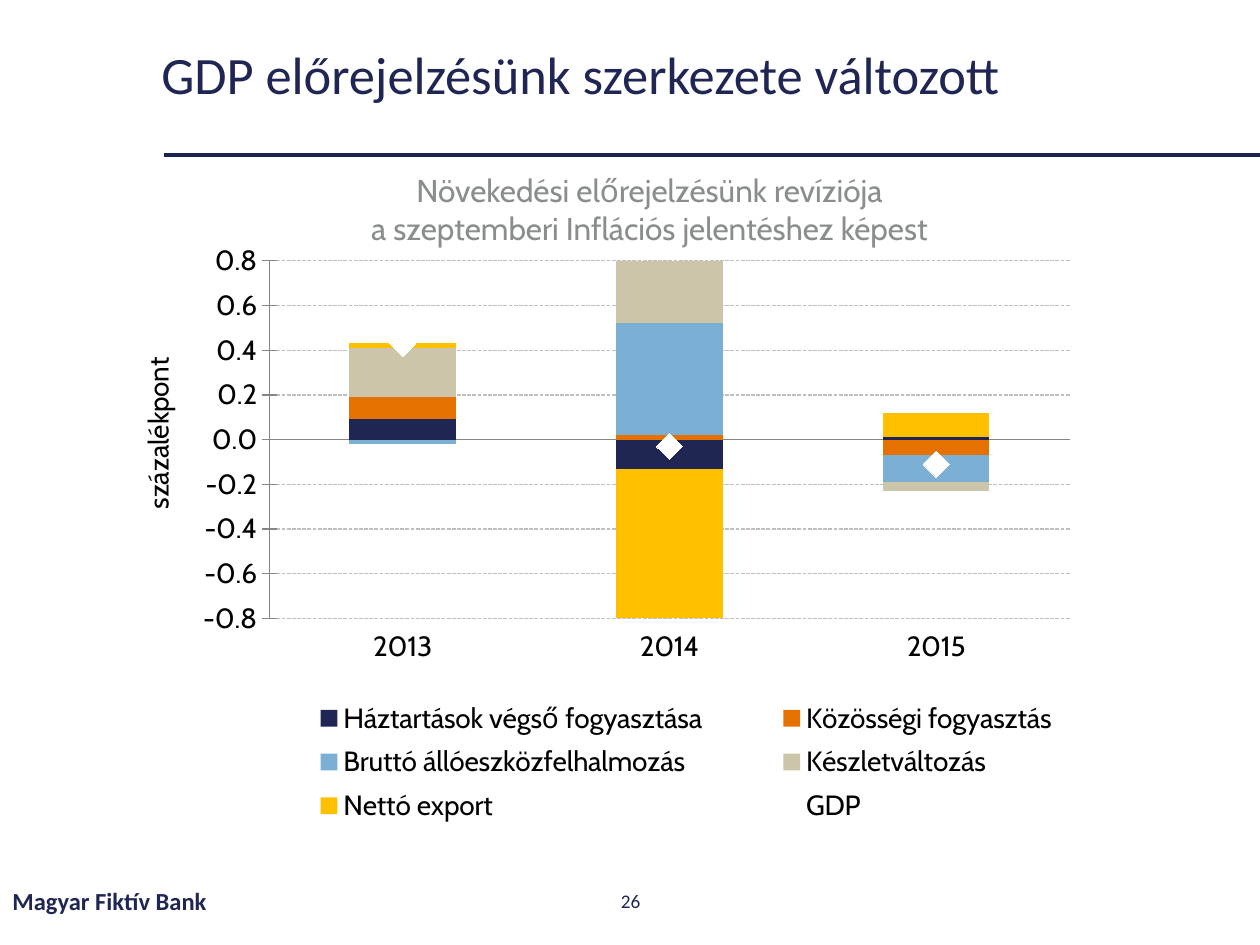
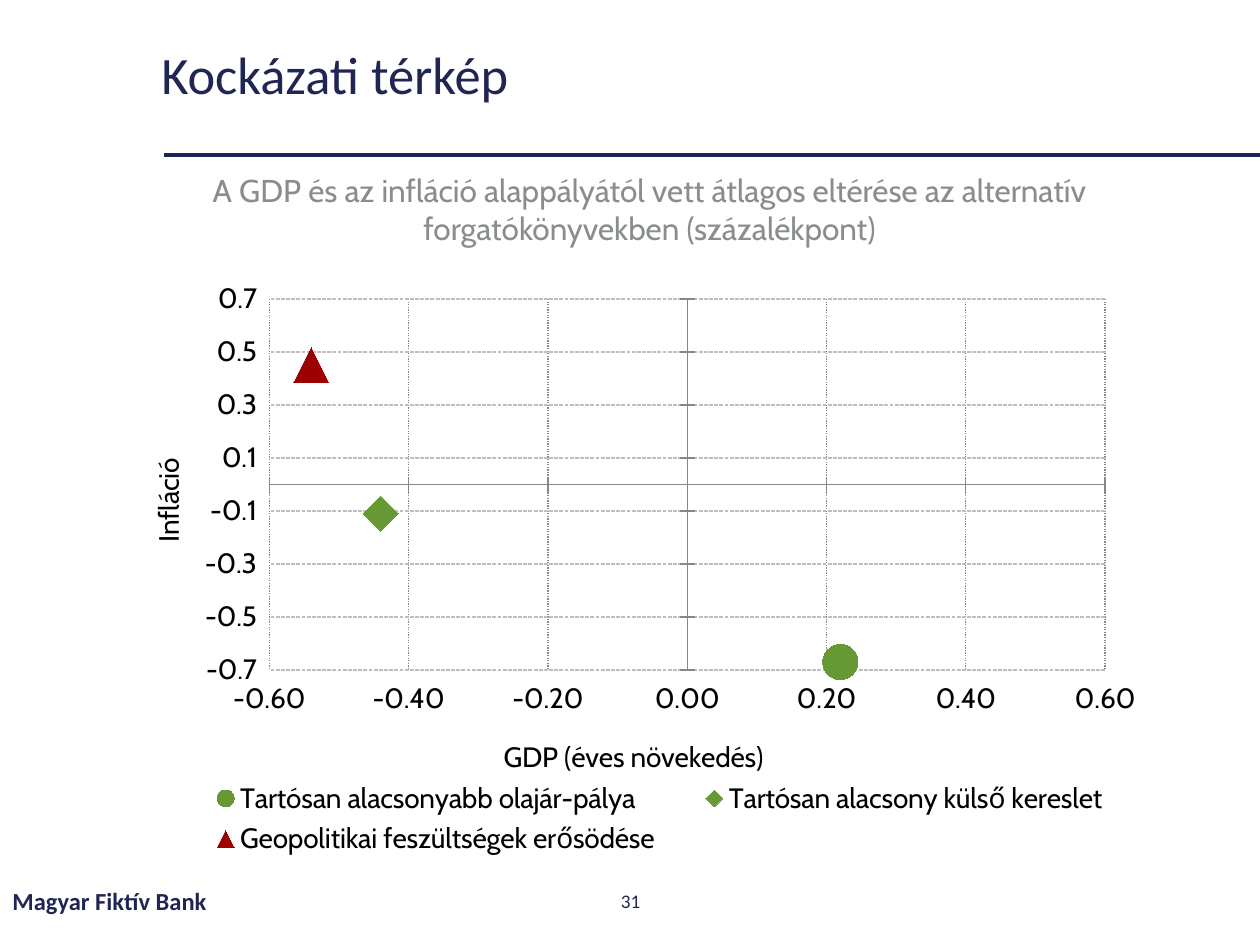
from dataclasses import dataclass
from pptx import Presentation
from pptx.chart.data import CategoryChartData as CatData, XyChartData as XyData
from pptx.dml.color import RGBColor as Rgb
from pptx.enum.chart import XL_CHART_TYPE as Kind, XL_LEGEND_POSITION as Spot
from pptx.enum.chart import XL_MARKER_STYLE as Mark, XL_TICK_LABEL_POSITION as Label
from pptx.enum.chart import XL_TICK_MARK as Tick
from pptx.enum.dml import MSO_LINE_DASH_STYLE as Dash
from pptx.enum.shapes import MSO_CONNECTOR as Conn
from pptx.enum.text import MSO_ANCHOR as Anchor, PP_ALIGN as Align
from pptx.oxml import parse_xml
from pptx.oxml.ns import nsdecls, qn
from pptx.util import Inches, Pt
from lxml.etree import SubElement

FOOT = "Magyar Fiktív Bank"

BARS = {
    "title": "GDP előrejelzésünk szerkezete változott",
    "page": "26",
    "lead": ["Növekedési előrejelzésünk revíziója",
             "a szeptemberi Inflációs jelentéshez képest"],
    "top": 1.94,
    "years": ["2013", "2014", "2015"],
    "rows": [
        ("Háztartások végső fogyasztása", (0.09, -0.13, 0.01), "202653"),
        ("Közösségi fogyasztás", (0.1, 0.02, -0.07), "E57200"),
        ("Bruttó állóeszközfelhalmozás", (-0.02, 0.5, -0.12), "7BAFD4"),
        ("Készletváltozás", (0.22, 0.31, -0.04), "CDC5A9"),
        ("Nettó export", (0.02, -0.72, 0.11), "FFC000"),
        ("GDP", (0.43, -0.03, -0.11), "FFFFFF"),
    ],
    "plot": (0.14, 0.025, 0.768, 0.603),
    "key": (0.12, 0.75, 0.84, 0.24),
    "ytitle": ("százalékpont", 0.01, 0.18),
    "yspan": (-0.8, 0.8, 0.2),
}
RISKS = {
    "title": "Kockázati térkép",
    "page": "31",
    "lead": ["A GDP és az infláció alappályától vett átlagos eltérése "
             "az alternatív forgatókönyvekben (százalékpont)"],
    "top": 2.18,
    "rows": [
        ("Tartósan alacsonyabb olajár-pálya", (0.22, -0.67), "669933", Mark.CIRCLE),
        ("Tartósan alacsony külső kereslet", (-0.44, -0.11), "669933", Mark.DIAMOND),
        ("Geopolitikai feszültségek erősödése", (-0.54, 0.45), "9C0000", Mark.TRIANGLE),
    ],
    "plot": (0.14, 0.041, 0.802, 0.624),
    "key": (0.05, 0.84, 0.93, 0.15),
    "xtitle": ("GDP (éves növekedés)", 0.36, 0.77),
    "ytitle": ("Infláció", 0.02, 0.3),
    "xspan": (-0.6, 0.6, 0.2),
    "yspan": (-0.7, 0.7, 0.2),
}


@dataclass(frozen=True)
class Theme:
    ink: str = "202653"
    rule: str = "1E2452"
    soft: str = "898D8D"
    black: str = "000000"
    grid: str = "BFBFBF"
    axis: str = "868686"
    head: str = "Calibri"
    body: str = "Cabin"
    title: int = 30
    lead: int = 18
    chart: int = 16
    foot: int = 14
    page: int = 11


T = Theme()


def style(font, size, color, face, bold=False):
    font.size, font.name, font.bold = Pt(size), face, bold
    font.color.rgb = Rgb.from_string(color)


def write(frame, lines, look, align=Align.LEFT, anchor=Anchor.MIDDLE):
    frame.word_wrap = True
    frame.vertical_anchor = anchor
    frame.text = "\n".join(lines)
    for para in frame.paragraphs:
        para.alignment = align
        for run in para.runs:
            style(run.font, *look)


def label(slide, box, *args):
    shape = slide.shapes.add_textbox(*map(Inches, box))
    write(shape.text_frame, *args)


def base(deck, data):
    slide = deck.slides.add_slide(deck.slide_layouts[5])
    head = slide.shapes.title
    head.left, head.top, head.width, head.height = map(Inches, (1.18, 0.2, 8.82, 0.83))
    write(head.text_frame, [data["title"]], (T.title, T.ink, T.head))
    head.text_frame.paragraphs[0].line_spacing = 0.9
    rule = slide.shapes.add_connector(
        Conn.STRAIGHT, Inches(1.3), Inches(1.23), deck.slide_width, Inches(1.23))
    rule.line.color.rgb = Rgb.from_string(T.rule)
    rule.line.width = Pt(2.25)
    SubElement(rule.element.spPr, qn("a:effectLst"))
    label(slide, (0, 6.95, 3.38, 0.4), [FOOT], (T.foot, T.ink, T.head, True))
    label(slide, (3.88, 6.95, 2.25, 0.4), [data["page"]],
          (T.page, T.ink, T.head), Align.CENTER)
    label(slide, (1.22, 1.31, 7.87, 0.71), data["lead"],
          (T.lead, T.soft, T.body), Align.CENTER, Anchor.TOP)
    return slide


def place(node, after, inner=False, **spots):
    for old in node.findall(qn("c:layout")):
        node.remove(old)
    layout = parse_xml(f"<c:layout {nsdecls('c')}><c:manualLayout/></c:layout>")
    pairs = [("layoutTarget", "inner")] if inner else []
    pairs += [("xMode", "edge"), ("yMode", "edge"), *spots.items()]
    for name, val in pairs:
        SubElement(layout[0], qn(f"c:{name}")).set("val", str(val))
    prior = node.find(qn(after)) if after else None
    node.insert(0 if prior is None else node.index(prior) + 1, layout)


def stroke(line, color, dash=None):
    line.color.rgb = Rgb.from_string(color)
    line.width = Pt(0.75)
    if dash:
        line.dash_style = dash


def tune(axis, tick, span=None, form=None, title=None, turn=0, dash=None):
    axis.major_tick_mark, axis.minor_tick_mark = tick, Tick.NONE
    axis.tick_label_position = Label.LOW
    stroke(axis.format.line, T.axis)
    style(axis.tick_labels.font, T.chart, T.black, T.body)
    axis.has_major_gridlines = bool(dash)
    if dash:
        color = T.axis if dash == Dash.ROUND_DOT else T.grid
        stroke(axis.major_gridlines.format.line, color, dash)
    if span:
        axis.minimum_scale, axis.maximum_scale, axis.major_unit = span
    if form:
        axis.tick_labels.number_format = form
        axis.tick_labels.number_format_is_linked = False
    if title:
        text, x, y = title
        head = axis.axis_title
        head.text_frame.text = text
        style(head.text_frame.paragraphs[0].runs[0].font, T.chart, T.black, T.body)
        node = part(head, "title")
        node.find(".//" + qn("a:bodyPr")).set("rot", str(turn))
        place(node, "c:tx", x=x, y=y)


def part(owner, name):
    return next(owner.element.iter(qn(f"c:{name}")))


def plot(slide, kind, feed, data):
    box = (0.98, data["top"], 8.27, 4.72)
    chart = slide.shapes.add_chart(kind, *map(Inches, box), feed).chart
    chart.has_title = False
    style(chart.font, T.chart, T.black, T.body)
    chart.has_legend = True
    key = chart.legend
    key.position, key.include_in_layout = Spot.BOTTOM, False
    style(key.font, T.chart, T.black, T.body)
    place(part(chart, "legend"), "c:legendPos", **dict(zip("xywh", data["key"])))
    place(part(chart, "plotArea"), None, True, **dict(zip("xywh", data["plot"])))
    tune(chart.value_axis, Tick.CROSS, data["yspan"], "0.0", data["ytitle"],
         -5400000, Dash.SQUARE_DOT)
    return chart


def dot(series, shape, size, color):
    series.format.line.fill.background()
    series.smooth = False
    mark = series.marker
    mark.style, mark.size = shape, size
    mark.format.fill.solid()
    mark.format.fill.fore_color.rgb = Rgb.from_string(color)
    mark.format.line.fill.background()


def overlay(chart):
    bars = part(chart, "barChart")
    last = bars.findall(qn("c:ser"))[-1]
    for flag in last.findall(qn("c:invertIfNegative")):
        last.remove(flag)
    line = parse_xml(
        f"<c:lineChart {nsdecls('c')}><c:grouping val='standard'/>"
        "<c:varyColors val='0'/><c:marker val='1'/></c:lineChart>")
    line.insert(2, last)
    for axis in bars.findall(qn("c:axId")):
        SubElement(line, qn("c:axId")).set("val", axis.get("val"))
    bars.addnext(line)
    return chart.plots[1].series[0]


def growth(deck, data):
    feed = CatData(number_format="0.00")
    feed.categories = data["years"]
    for name, vals, color in data["rows"]:
        feed.add_series(name, vals)
    chart = plot(base(deck, data), Kind.COLUMN_STACKED, feed, data)
    tune(chart.category_axis, Tick.NONE)
    bars = chart.plots[0]
    bars.gap_width, bars.overlap, bars.vary_by_categories = 150, 100, False
    dot(overlay(chart), Mark.DIAMOND, 15, data["rows"][-1][2])
    for series, row in zip(bars.series, data["rows"]):
        series.invert_if_negative = False
        series.format.fill.solid()
        series.format.fill.fore_color.rgb = Rgb.from_string(row[2])


def risk(deck, data):
    feed = XyData(number_format="0.00")
    for name, point, color, shape in data["rows"]:
        feed.add_series(name).add_data_point(*point)
    chart = plot(base(deck, data), Kind.XY_SCATTER, feed, data)
    tune(chart.category_axis, Tick.CROSS, data["xspan"], "0.00", data["xtitle"],
         dash=Dash.ROUND_DOT)
    chart.plots[0].vary_by_categories = False
    for series, row in zip(chart.plots[0].series, data["rows"]):
        dot(series, row[3], 20, row[2])


def main():
    deck = Presentation()
    deck.slide_width, deck.slide_height = Inches(10), Inches(7.5)
    growth(deck, BARS)
    risk(deck, RISKS)
    deck.save("out.pptx")


if __name__ == "__main__":
    main()
